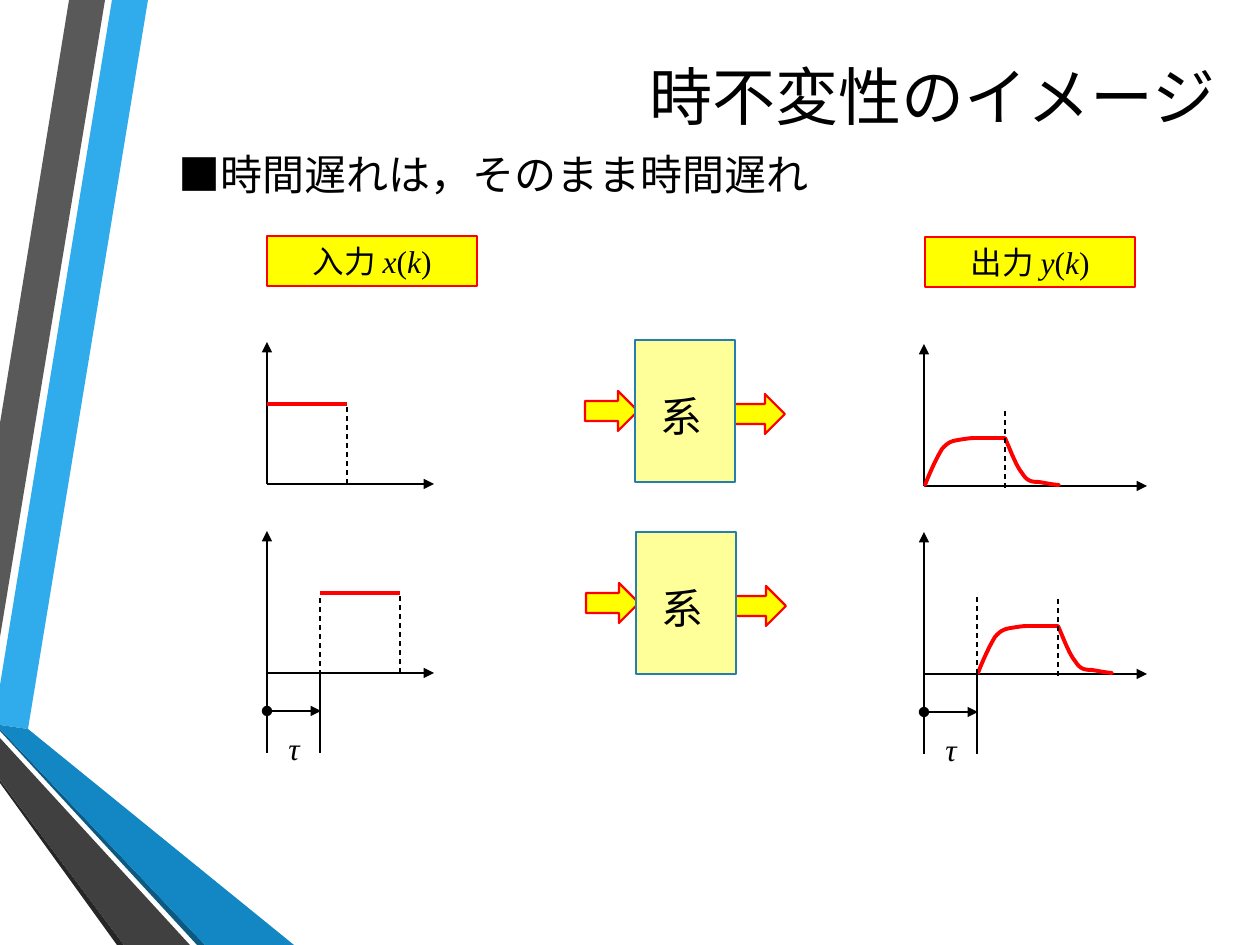
from pptx import Presentation
from pptx.dml.color import RGBColor
from pptx.enum.dml import MSO_LINE
from pptx.enum.shapes import MSO_CONNECTOR, MSO_SHAPE
from pptx.enum.text import MSO_ANCHOR, PP_ALIGN
from pptx.oxml.ns import qn
from pptx.util import Emu, Pt
from lxml.etree import SubElement

PX = 914400 / 126
BLACK = RGBColor(0, 0, 0)
RED = RGBColor(0xFF, 0, 0)
YELLOW = RGBColor(0xFF, 0xFF, 0)
CREAM = RGBColor(0xFF, 0xFF, 0x99)
BLUE = RGBColor(0x24, 0x7F, 0xAF)
SERIF = "Times New Roman"

# Content, in px
RIBBONS = [
    (RGBColor(0x30, 0xAC, 0xEC), [(0, 685), (0, 725), (28, 729), (148, 0), (112, 0)]),
    (RGBColor(0x59, 0x59, 0x59), [(105, 0), (69, 0), (0, 423), (0, 637)]),
    (RGBColor(0x26, 0x26, 0x26), [(0, 780), (0, 783), (117, 945), (124, 945)]),
    (RGBColor(0x0C, 0x5A, 0x82), [(0, 729), (0, 731), (197, 945), (205, 945)]),
    (RGBColor(0x12, 0x87, 0xC3), [(0, 729), (205, 945), (294, 945), (28, 729), (0, 725)]),
    (RGBColor(0x40, 0x40, 0x40), [(0, 780), (124, 945), (190, 945), (0, 738)]),
]
TITLE = "時不変性のイメージ"
SUBTITLE = "■時間遅れは，そのまま時間遅れ"
SIGNALS = [(267, 236, "入力 ", "x"), (925, 237, "出力 ", "y")]
SYSTEMS = [(635, 340), (636, 532)]
DELAY = 53
PULSE = 80
INPUTS = [(267, 484, 0), (267, 673, DELAY)]
OUTPUTS = [(924, 486, 0), (924, 674, DELAY)]
# Bezier points measured from the plot origin
RISE = [(1, -1), (6, -14), (13, -29), (18, -37), (24, -44), (28, -45), (34, -46),
        (40, -47), (46, -48), (51, -48), (53, -48), (79, -48), (81, -48)]
DECAY = [(81, -48), (86, -37), (92, -20), (98, -13), (103, -5), (107, -4),
         (115, -4), (121, -3), (131, -1), (135, -1)]

prs = Presentation()
prs.slide_width, prs.slide_height = Emu(9144000), Emu(6858000)
s = prs.slides.add_slide(prs.slide_layouts[6])


def emu(*values):
    return [Emu(round(v * PX)) for v in values]


def paint(sp, fill=None, line=None, width=0.75):
    sp.shadow.inherit = False
    if fill is None:
        sp.fill.background()
    else:
        sp.fill.solid()
        sp.fill.fore_color.rgb = fill
    if line is None:
        sp.line.fill.background()
    else:
        sp.line.color.rgb = line
        sp.line.width = Pt(width)


def box(kind, x, y, w, h, fill, line, width=0.75):
    sp = s.shapes.add_shape(kind, *emu(x, y, w, h))
    paint(sp, fill, line, width)
    return sp


def outline(points, close):
    points = [emu(*point) for point in points]
    fb = s.shapes.build_freeform(*points[0], scale=1)
    fb.add_line_segments(points[1:], close=close)
    return fb.convert_to_shape()


def curve(points, x, y, steps=10):
    track = [points[0]]
    for i in range(0, len(points) - 1, 3):
        a, b, c, d = points[i:i + 4]
        for k in range(1, steps + 1):
            t = k / steps
            u = 1 - t
            track.append([u**3 * a[j] + 3 * u * u * t * b[j] + 3 * u * t * t * c[j]
                          + t**3 * d[j] for j in (0, 1)])
    sp = outline([(x + px, y + py) for px, py in track], False)
    paint(sp, line=RED, width=2.25)
    sp.line._ln.set("cap", "rnd")


def line(x1, y1, x2, y2, color=BLACK, width=0.75, dash=False, head=None, tail=None):
    c = s.shapes.add_connector(MSO_CONNECTOR.STRAIGHT, *emu(x1, y1, x2, y2))
    c.line.color.rgb = color
    c.line.width = Pt(width)
    if dash:
        c.line.dash_style = MSO_LINE.DASH
    sp_pr = c.element.spPr
    ln = sp_pr.find(qn("a:ln"))
    for tag, end in (("a:headEnd", head), ("a:tailEnd", tail)):
        if end:
            SubElement(ln, qn(tag), type=end)
    SubElement(sp_pr, qn("a:effectLst"))


def write(sp, runs, size, align=PP_ALIGN.CENTER, anchor=MSO_ANCHOR.TOP, name=SERIF):
    tf = sp.text_frame
    tf.word_wrap = False
    tf.vertical_anchor = anchor
    p = tf.paragraphs[0]
    p.alignment = align
    for text, italic in runs:
        r = p.add_run()
        r.text = text
        formats = {"name": name, "size": Pt(size), "italic": italic}
        for key, value in formats.items():
            setattr(r.font, key, value)
        r.font.color.rgb = BLACK
    return p


def label(x, y, w, h, text, size, italic=False, **kw):
    return write(s.shapes.add_textbox(*emu(x, y, w, h)), [(text, italic)], size, **kw)


def axes(x, y, length):
    line(x, y, x + length, y, tail="triangle")
    line(x, y, x, y - 142, tail="triangle")


def delay_mark(x, y):
    for edge in (x, x + DELAY):
        line(edge, y + 80, edge, y)
    line(x, y + 38, x + DELAY + 1, y + 38, head="oval", tail="triangle")
    label(x, y + 50, 54, 50, "τ", 18, True)


# Side ribbons
for color, points in RIBBONS:
    paint(outline(points, True), color)

# Headings
label(166, 26, 1062, 139, TITLE, 36, align=PP_ALIGN.RIGHT,
      anchor=MSO_ANCHOR.MIDDLE, name="Calibri")
p = label(166, 142, 690, 63, SUBTITLE, 24, align=PP_ALIGN.LEFT)
indent, = emu(49)
p._p.get_or_add_pPr().set("marL", str(indent))
p._p.get_or_add_pPr().set("indent", str(-indent))

# Signal names
for x, y, text, var in SIGNALS:
    sp = box(MSO_SHAPE.RECTANGLE, x, y, 210, 50, YELLOW, RED)
    write(sp, [(text, False), (var, True), ("(", False), ("k", True), (")", False)], 18)

# Systems with their arrows
for x, y in SYSTEMS:
    for dx, dy in ((-50, 51), (97, 54)):
        box(MSO_SHAPE.RIGHT_ARROW, x + dx, y + dy, 53, 40, YELLOW, RED, 1.25)
    box(MSO_SHAPE.RECTANGLE, x, y, 100, 142, CREAM, BLUE, 1.25)
    label(x - 23, y + 44, 139, 63, "系", 24)

# Input pulses
for x, y, delay in INPUTS:
    axes(x, y, 167)
    start, end = x + delay, x + delay + PULSE
    line(start, y - 80, end, y - 80, RED, 2.25)
    line(end, y, end, y - 80, dash=True)
    if delay:
        line(start, y + 2, start, y - 78, dash=True)
        delay_mark(x, y)

# Output responses
for x, y, delay in OUTPUTS:
    axes(x, y, 223)
    start = x + delay
    for points in (RISE, DECAY):
        curve(points, start, y)
    line(start + 81, y + 2, start + 81, y - 78, dash=True)
    if delay:
        line(start, y, start, y - 79, dash=True)
        delay_mark(x, y)

prs.save("out.pptx")
